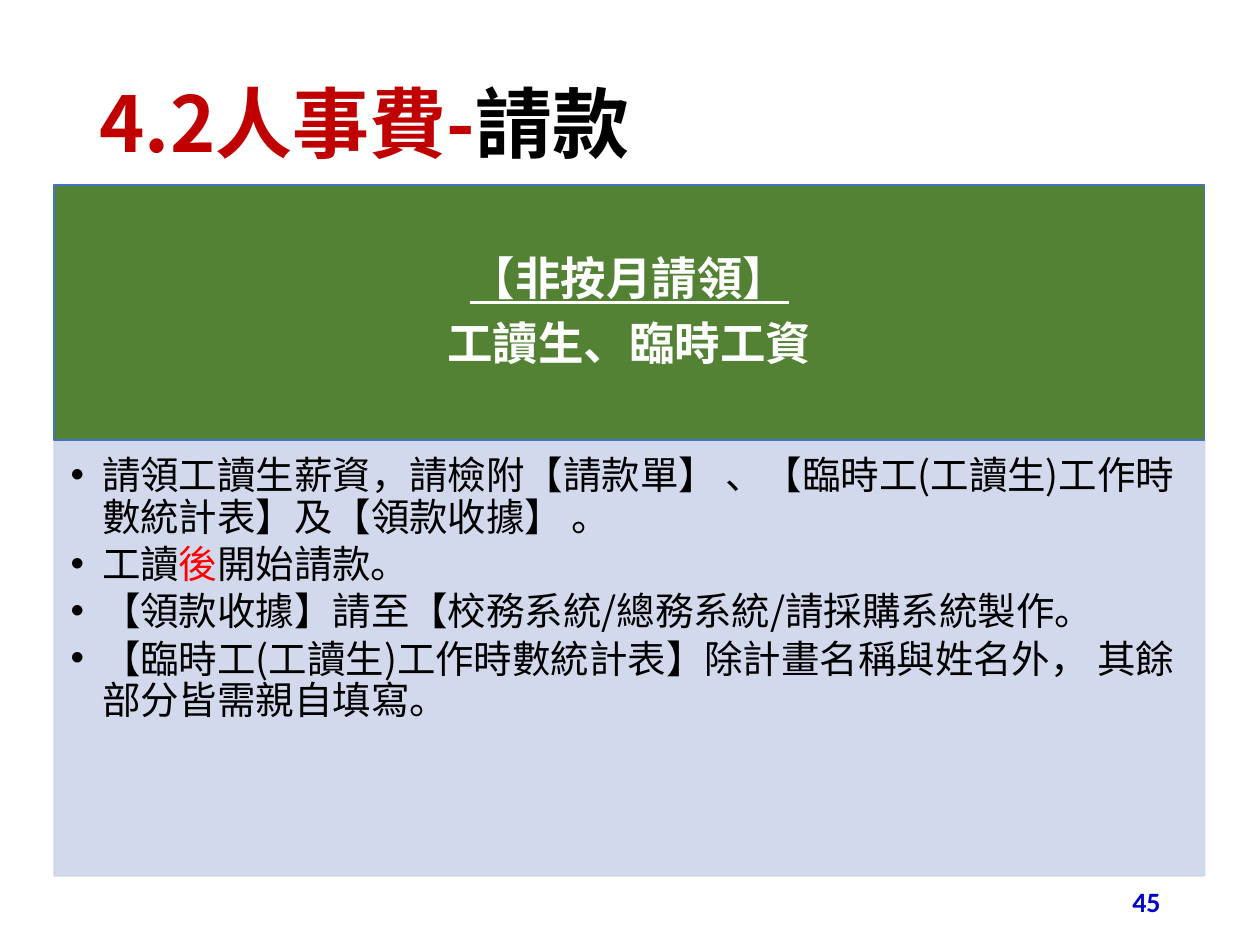
from lxml import etree
from pptx import Presentation
from pptx.dml.color import RGBColor
from pptx.enum.shapes import MSO_SHAPE
from pptx.enum.text import MSO_ANCHOR, MSO_AUTO_SIZE, PP_ALIGN
from pptx.oxml.ns import qn
from pptx.util import Inches, Pt

RECT = MSO_SHAPE.RECTANGLE
TOP, MIDDLE = MSO_ANCHOR.TOP, MSO_ANCHOR.MIDDLE
LEFT, CENTER, RIGHT = PP_ALIGN.LEFT, PP_ALIGN.CENTER, PP_ALIGN.RIGHT
NO_FIT = MSO_AUTO_SIZE.NONE
CJK = "Noto Sans CJK SC"
RULES = [
    [("請領工讀生薪資，請檢附【請款單】 、【臨時工(工讀生)工作時數統計表】及【領款收據】 。", "000000")],
    [("工讀", "000000"), ("後", "FF0000"), ("開始請款。", "000000")],
    [("【領款收據】請至【校務系統/總務系統/請採購系統製作。", "000000")],
    [("【臨時工(工讀生)工作時數統計表】除計畫名稱與姓名外， 其餘部分皆需親自填寫。", "000000")],
]


def color(code):
    return RGBColor.from_string(code)


def place(shape, box):
    shape.left, shape.top, shape.width, shape.height = map(Inches, box)


def paint(shape, fill, line):
    shape.fill.solid()
    shape.fill.fore_color.rgb = color(fill)
    shape.line.color.rgb = color(line)
    shape.line.width = Pt(1)


def fade(shape, percent):
    """Make the fill and the line of a shape partly transparent."""
    for tone in shape._element.spPr.iter(qn("a:srgbClr")):
        etree.SubElement(tone, qn("a:alpha"), val=str(percent * 1000))


def set_frame(shape, anchor, insets=(0.1, 0.05, 0.1, 0.05)):
    frame = shape.text_frame
    frame.word_wrap = True
    frame.auto_size = NO_FIT
    frame.vertical_anchor = anchor
    (frame.margin_left, frame.margin_top,
     frame.margin_right, frame.margin_bottom) = map(Inches, insets)
    return frame


def write(para, parts, size, font=CJK, bold=False):
    """Fill a paragraph with (text, colour) runs."""
    for text, code in parts:
        run = para.add_run()
        run.text = text
        run.font.size = Pt(size)
        run.font.name = font
        run.font.bold = bold
        run.font.color.rgb = color(code)
        etree.SubElement(run.font._element, qn("a:ea"), typeface=font)


def add_bullet(para):
    props = para._p.get_or_add_pPr()
    props.set("marL", str(Inches(0.25)))
    props.set("indent", str(Inches(-0.25)))
    etree.SubElement(props, qn("a:buFont"), typeface="Arial")
    etree.SubElement(props, qn("a:buChar"), char="•")


def add_paras(frame, count):
    return [frame.paragraphs[0]] + [frame.add_paragraph() for _ in range(count - 1)]


def add_title(slide, box):
    title = slide.shapes.title
    place(title, box)
    para = set_frame(title, MIDDLE).paragraphs[0]
    para.alignment = LEFT
    para.line_spacing = 0.9
    write(para, [("4.2人事費-", "C00000"), ("請款", "000000")], 44, bold=True)


def add_header(slide, box):
    header = slide.shapes.add_shape(RECT, *map(Inches, box))
    header.shadow.inherit = False
    paint(header, "548235", "4472C4")
    frame = set_frame(header, MIDDLE, (0.2, 0.12, 0.2, 0.12))
    lines = ["【非按月請領】", "工讀生、臨時工資"]
    paras = add_paras(frame, len(lines))
    for para, text in zip(paras, lines):
        para.alignment = CENTER
        para.line_spacing = Pt(28)
        para.space_after = Pt(9)
        write(para, [(text, "FFFFFF")], 26, bold=True)
    paras[0].runs[0].font.underline = True


def add_rules(slide, box):
    body = slide.placeholders[1]
    place(body, box)
    paint(body, "CFD5EA", "CFD5EA")
    fade(body, 90)
    frame = set_frame(body, TOP, (0.13, 0.13, 0.17, 0.19))
    for para, parts in zip(add_paras(frame, len(RULES)), RULES):
        para.level = 1
        add_bullet(para)
        para.alignment = LEFT
        para.line_spacing = Pt(23.7)
        para.space_before = Pt(0)
        para.space_after = Pt(3.3)
        write(para, parts, 22)


def add_number(slide, box):
    number = slide.shapes.add_textbox(*map(Inches, box))
    para = set_frame(number, MIDDLE).paragraphs[0]
    para.alignment = RIGHT
    write(para, [("45", "0000CC")], 16, "Calibri", True)


def main():
    deck = Presentation()
    deck.slide_width, deck.slide_height = Inches(10), Inches(7.5)
    slide = deck.slides.add_slide(deck.slide_layouts[1])
    left, top, width, head = 0.43, 1.47, 9.13, 2.02
    add_title(slide, (0.69, 0.4, 8.62, 1.22))
    add_header(slide, (left, top, width, head))
    add_rules(slide, (left, top + head, width, 3.46))
    add_number(slide, (7.06, 6.95, 2.25, 0.4))
    deck.save("out.pptx")


if __name__ == "__main__":
    main()
